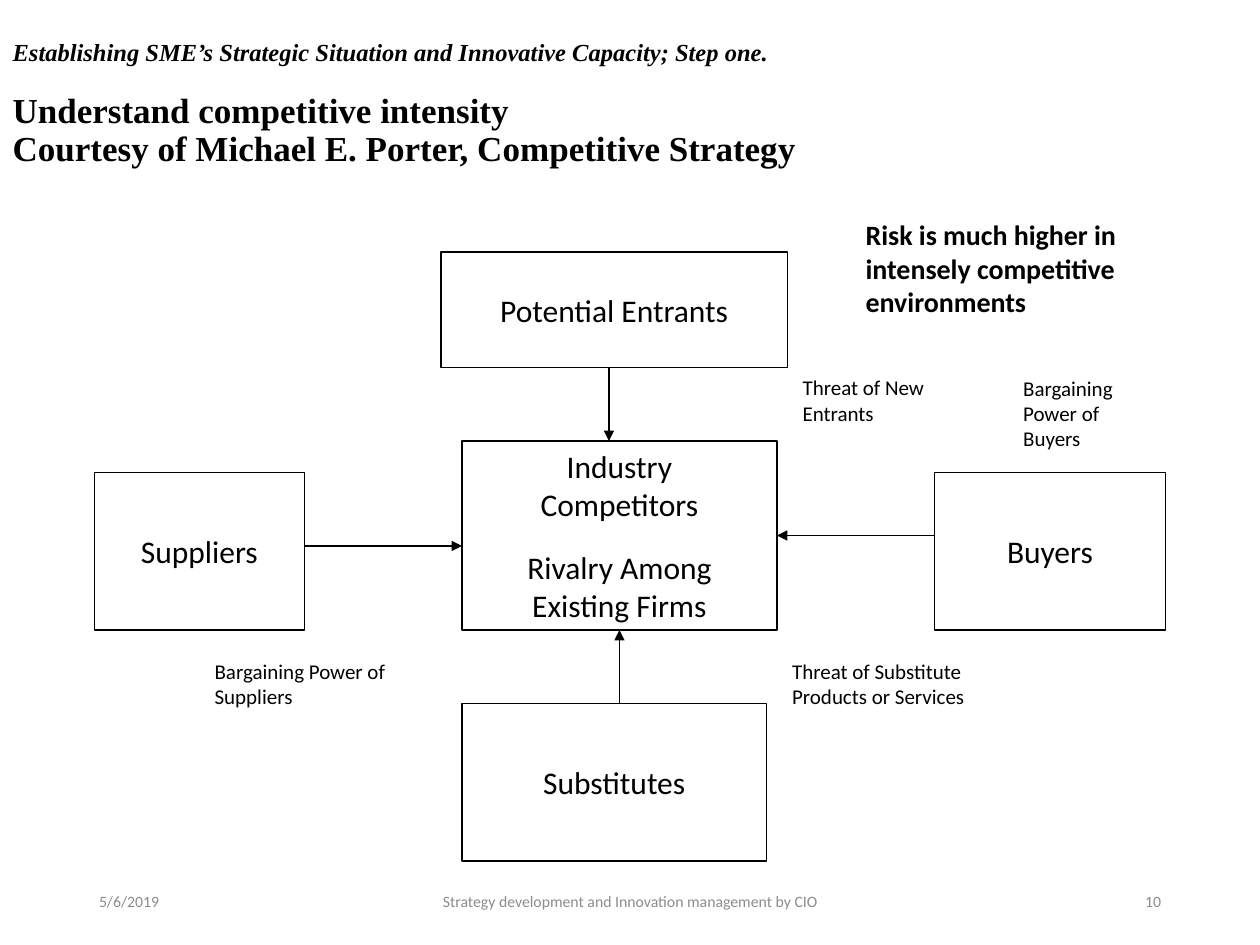
from pptx import Presentation
from pptx.dml.color import RGBColor
from pptx.enum.shapes import MSO_CONNECTOR, MSO_SHAPE
from pptx.enum.text import MSO_ANCHOR, MSO_AUTO_SIZE, PP_ALIGN
from pptx.oxml.ns import qn
from pptx.util import Inches, Pt
from lxml import etree

LEFT, CENTER, RIGHT = PP_ALIGN.LEFT, PP_ALIGN.CENTER, PP_ALIGN.RIGHT
TOP, MIDDLE = MSO_ANCHOR.TOP, MSO_ANCHOR.MIDDLE
COLORS = {"ink": "000000", "muted": "8C8C8C"}
BODY, HEADING = "Calibri", "Times New Roman"

# Content: places are (left, top, width, height) in grid cells of 1/12 inch
CELL = Inches(1) / 12
KICKER = "Establishing SME’s Strategic Situation and Innovative Capacity; Step one."
HEADLINE = ["Understand competitive intensity",
            "Courtesy of Michael E. Porter, Competitive Strategy"]
FORCES = {
    "entrants": ((42, 24, 33, 11), ["Potential Entrants"]),
    "substitutes": ((44, 67, 29, 15), ["Substitutes"]),
    "suppliers": ((9, 45, 20, 15), ["Suppliers"]),
    "buyers": ((89, 45, 22, 15), ["Buyers"]),
    "rivalry": ((44, 42, 30, 18), ["Industry", "Competitors",
                                   "Rivalry Among", "Existing Firms"]),
}
# Start, end, and the side of the rivalry box joined at its middle
ARROWS = [
    ((29, 52), (44, 52), None),
    ((89, 51), (74, 51), 3),
    ((58, 35), (58, 42), None),
    ((59, 67), (59, 60), 2),
]
LABELS = [
    ((19, 62, 23, 14.8), "Bargaining Power of Suppliers", 12, False),
    ((96, 35, 14, 8.8), "Bargaining Power of Buyers", 12, False),
    ((75, 35, 20, 6.2), "Threat of New Entrants", 12, False),
    ((74, 62, 20, 6.2), "Threat of Substitute Products or Services", 12, False),
    ((81, 20, 34, 11), "Risk is much higher in intensely competitive environments",
     16, True),
]
FOOTERS = [
    ((8.25, 83.4, 27, 4.8), "5/6/2019", LEFT),
    ((39.75, 83.4, 40.5, 4.8), "Strategy development and Innovation management by CIO",
     CENTER),
    ((84.75, 83.4, 27, 4.8), "10", RIGHT),
]


def grid(*cells):
    return [round(c * CELL) for c in cells]


def style(r, size, font=BODY, color="ink", bold=False, italic=False):
    f = r.font
    f.name, f.size, f.bold, f.italic = font, Pt(size), bold, italic
    f.color.rgb = RGBColor.from_string(COLORS[color])


def write(tf, lines, size, align=LEFT, anchor=TOP, wrap=True, inset=(0.12, 0.06), **look):
    tf.text = "\n".join(lines)
    tf.word_wrap, tf.vertical_anchor = wrap, anchor
    tf.margin_left = tf.margin_right = Inches(inset[0])
    tf.margin_top = tf.margin_bottom = Inches(inset[1])
    for p in tf.paragraphs:
        p.alignment = align
        for r in p.runs:
            style(r, size, **look)


def add_arrow(s, start, end):
    c = s.shapes.add_connector(MSO_CONNECTOR.STRAIGHT, *grid(*start, *end))
    c.line.width = Pt(0.75)
    c.line.color.rgb = RGBColor.from_string(COLORS["ink"])
    etree.SubElement(c.line._get_or_add_ln(), qn("a:tailEnd"), type="triangle")
    etree.SubElement(c._element.spPr, qn("a:effectLst"))
    return c


prs = Presentation()
prs.slide_width, prs.slide_height = Inches(10), Inches(7.5)
s = prs.slides.add_slide(prs.slide_layouts[5])

# Title
title = s.shapes.title
title.left, title.top, title.width, title.height = grid(0, 0, 120, 20)
tf = title.text_frame
tf.auto_size, tf.vertical_anchor = MSO_AUTO_SIZE.NONE, MIDDLE
p = tf.paragraphs[0]
p.text = "\v".join([KICKER, "", *HEADLINE])
p.alignment, p.line_spacing = LEFT, 0.9
style(p.runs[0], 14, HEADING, bold=True, italic=True)
for r in p.runs[1:]:
    style(r, 20, HEADING, bold=True)
for br, size in zip(p._p.findall(qn("a:br")), (14, 14, 20)):
    etree.SubElement(br, qn("a:rPr"), sz=str(size * 100))

# Force boxes
boxes = {}
for name, (place, lines) in FORCES.items():
    sp = s.shapes.add_shape(MSO_SHAPE.RECTANGLE, *grid(*place))
    sp.shadow.inherit = False
    sp.fill.background()
    sp.line.width = Pt(0.75)
    sp.line.color.rgb = RGBColor.from_string(COLORS["ink"])
    write(sp.text_frame, lines, 18, CENTER, MIDDLE, wrap=False)
    boxes[name] = sp
boxes["rivalry"].text_frame.paragraphs[2].space_before = Pt(14.6)

# Arrows towards the rivalry box
for start, end, side in ARROWS:
    arrow = add_arrow(s, start, end)
    if side is not None:
        arrow.end_connect(boxes["rivalry"], side)

# Labels and footer
for place, text, size, bold in LABELS:
    tf = s.shapes.add_textbox(*grid(*place)).text_frame
    write(tf, [text], size, bold=bold)
for place, text, align in FOOTERS:
    tf = s.shapes.add_textbox(*grid(*place)).text_frame
    write(tf, [text], 9, align, MIDDLE, inset=(0.1, 0.05), color="muted")

prs.save("out.pptx")
